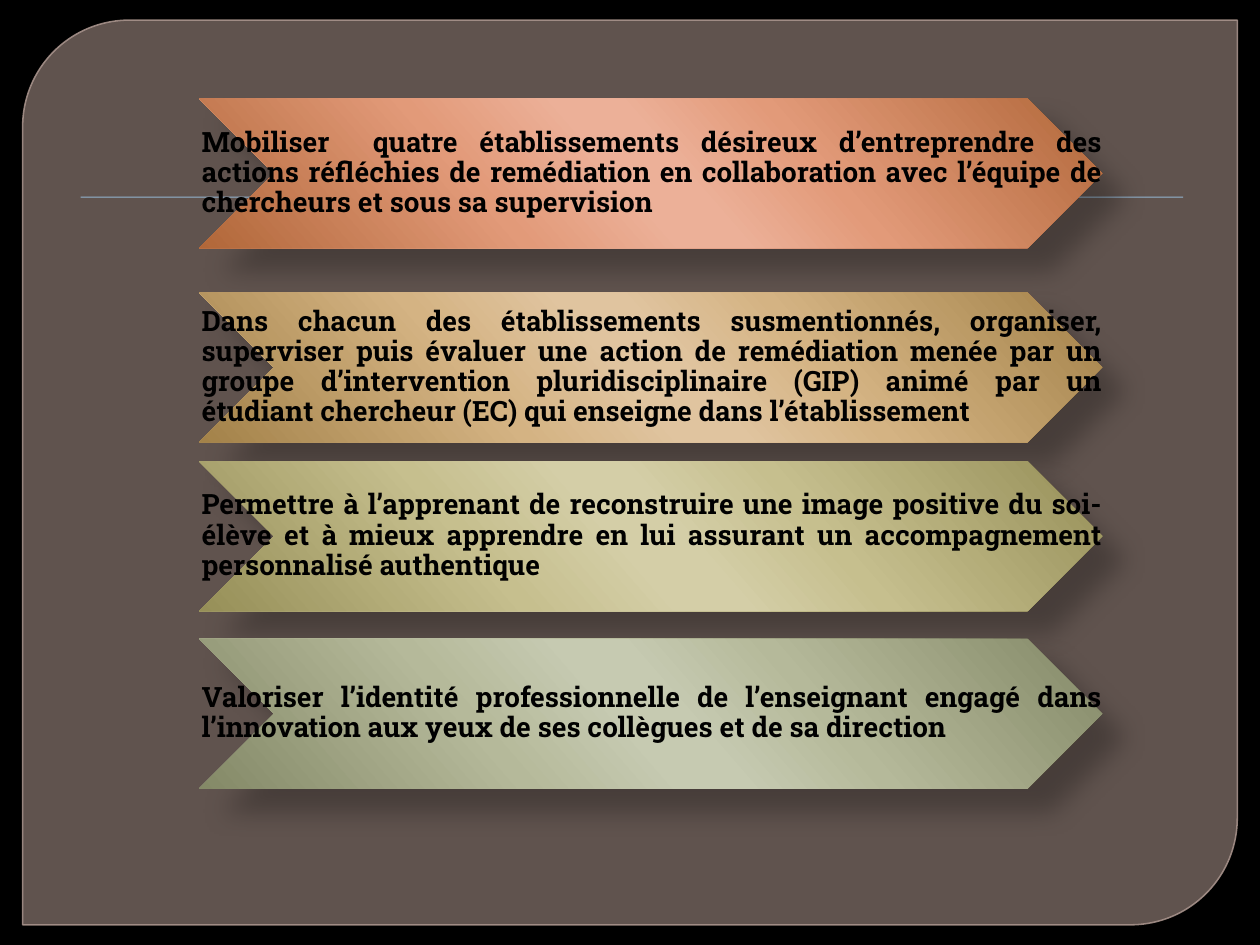
"""Build a slide of four chevrons stating the objectives of a remediation project."""
from lxml import etree
from pptx import Presentation
from pptx.dml.color import RGBColor
from pptx.enum.shapes import MSO_SHAPE
from pptx.enum.text import MSO_ANCHOR, PP_ALIGN
from pptx.oxml import parse_xml
from pptx.oxml.ns import nsdecls, qn
from pptx.util import Inches, Pt

PANEL = MSO_SHAPE.ROUND_2_DIAG_RECTANGLE
RECTANGLE = MSO_SHAPE.RECTANGLE
CHEVRON = MSO_SHAPE.CHEVRON
MIDDLE = MSO_ANCHOR.MIDDLE
JUSTIFY = PP_ALIGN.JUSTIFY

THEME = {
    "background": RGBColor.from_string("000000"),
    "panel": RGBColor.from_string("948079"),
    "panel_line": RGBColor.from_string("A9948D"),
    "rule": RGBColor.from_string("94B6D2"),
    "font": {
        "name": "Roboto Slab",
        "size": Pt(16),
        "bold": True,
    },
    "text": RGBColor.from_string("000000"),
    "stops": (0, 33, 47, 53, 68, 100),
    "angle": 139,
}
FRAME_FORMAT = {
    "word_wrap": True,
    "vertical_anchor": MIDDLE,
    "margin_left": Inches(0.02),
    "margin_top": Inches(0.01),
    "margin_right": Inches(0),
    "margin_bottom": Inches(0.01),
}
LEFT, WIDTH, HEIGHT = Inches(1.58), Inches(7.17), Inches(1.19)
OBJECTIVES = [
    (0.78, ("B16739", "E29A79", "ECB098"),
     "Mobiliser  quatre établissements désireux d’entreprendre des actions réfléchies "
     "de remédiation en collaboration avec l’équipe de chercheurs et sous sa supervision"),
    (2.32, ("A38249", "D4B383", "E0C49F"),
     "Dans chacun des établissements susmentionnés, organiser, superviser puis évaluer "
     "une action de remédiation menée par un groupe d’intervention pluridisciplinaire "
     "(GIP) animé par un étudiant chercheur (EC) qui enseigne dans l’établissement"),
    (3.66, ("968F58", "C6BF8E", "D4CEA7"),
     "Permettre à l’apprenant de reconstruire une image positive du soi-élève et à mieux "
     "apprendre en lui assurant un accompagnement personnalisé authentique"),
    (5.07, ("848967", "B5B99A", "C6CAB1"),
     "Valoriser l’identité professionnelle de l’enseignant engagé dans l’innovation aux "
     "yeux de ses collègues et de sa direction"),
]


def add_shadow(shape, opacity, blur, distance, direction):
    shape.shadow.inherit = False
    effects = shape._element.spPr.find(qn("a:effectLst"))
    effects.append(parse_xml(
        f'<a:outerShdw {nsdecls("a")} blurRad="{Pt(blur)}" dist="{Pt(distance)}" '
        f'dir="{direction * 60000}" algn="tl" rotWithShape="0"><a:srgbClr val="000000">'
        f'<a:alpha val="{opacity * 1000}"/></a:srgbClr></a:outerShdw>'))


def set_opacity(fill_element, opacity):
    color = fill_element.find(qn("a:srgbClr"))
    etree.SubElement(color, qn("a:alpha")).set("val", str(opacity * 1000))


presentation = Presentation()
presentation.slide_width, presentation.slide_height = Inches(10), Inches(7.5)
slide = presentation.slides.add_slide(presentation.slide_layouts[6])
slide.background.fill.solid()
slide.background.fill.fore_color.rgb = THEME["background"]

panel = slide.shapes.add_shape(PANEL, Inches(0.18), Inches(0.16), Inches(9.64), Inches(7.18))
panel.adjustments[0] = 0.118
panel.shadow.inherit = False
panel.fill.solid()
panel.fill.fore_color.rgb = THEME["panel"]
panel.line.color.rgb = THEME["panel_line"]
panel.line.width = Pt(0.87)
panel_properties = panel._element.spPr
set_opacity(panel_properties.find(qn("a:solidFill")), 65)
set_opacity(panel_properties.find(qn("a:ln")).find(qn("a:solidFill")), 88)

rule = slide.shapes.add_shape(RECTANGLE, Inches(0.64), Inches(1.56), Inches(8.75), Inches(0.01))
rule.fill.solid()
rule.fill.fore_color.rgb = THEME["rule"]
rule.line.fill.background()
add_shadow(rule, 75, 1, 1, 90)

for top, (dark, medium, light), text in OBJECTIVES:
    chevron = slide.shapes.add_shape(CHEVRON, LEFT, Inches(top), WIDTH, HEIGHT)
    chevron.line.fill.background()
    chevron.fill.gradient()
    gradient = chevron._element.spPr.find(qn("a:gradFill"))
    stop_list = gradient.find(qn("a:gsLst"))
    for stop in list(stop_list):
        stop_list.remove(stop)
    for position, color in zip(THEME["stops"], (dark, medium, light, light, medium, dark)):
        stop = etree.SubElement(stop_list, qn("a:gs"), pos=str(position * 1000))
        etree.SubElement(stop, qn("a:srgbClr"), val=color)
    gradient.find(qn("a:lin")).set("ang", str(THEME["angle"] * 60000))
    add_shadow(chevron, 26, 15, 18, 45)

    label = slide.shapes.add_textbox(LEFT, Inches(top), WIDTH, HEIGHT)
    for name, value in FRAME_FORMAT.items():
        setattr(label.text_frame, name, value)
    paragraph = label.text_frame.paragraphs[0]
    paragraph.alignment = JUSTIFY
    paragraph.line_spacing = 0.9
    run = paragraph.add_run()
    run.text = text
    for name, value in THEME["font"].items():
        setattr(run.font, name, value)
    run.font.color.rgb = THEME["text"]

presentation.save("out.pptx")
